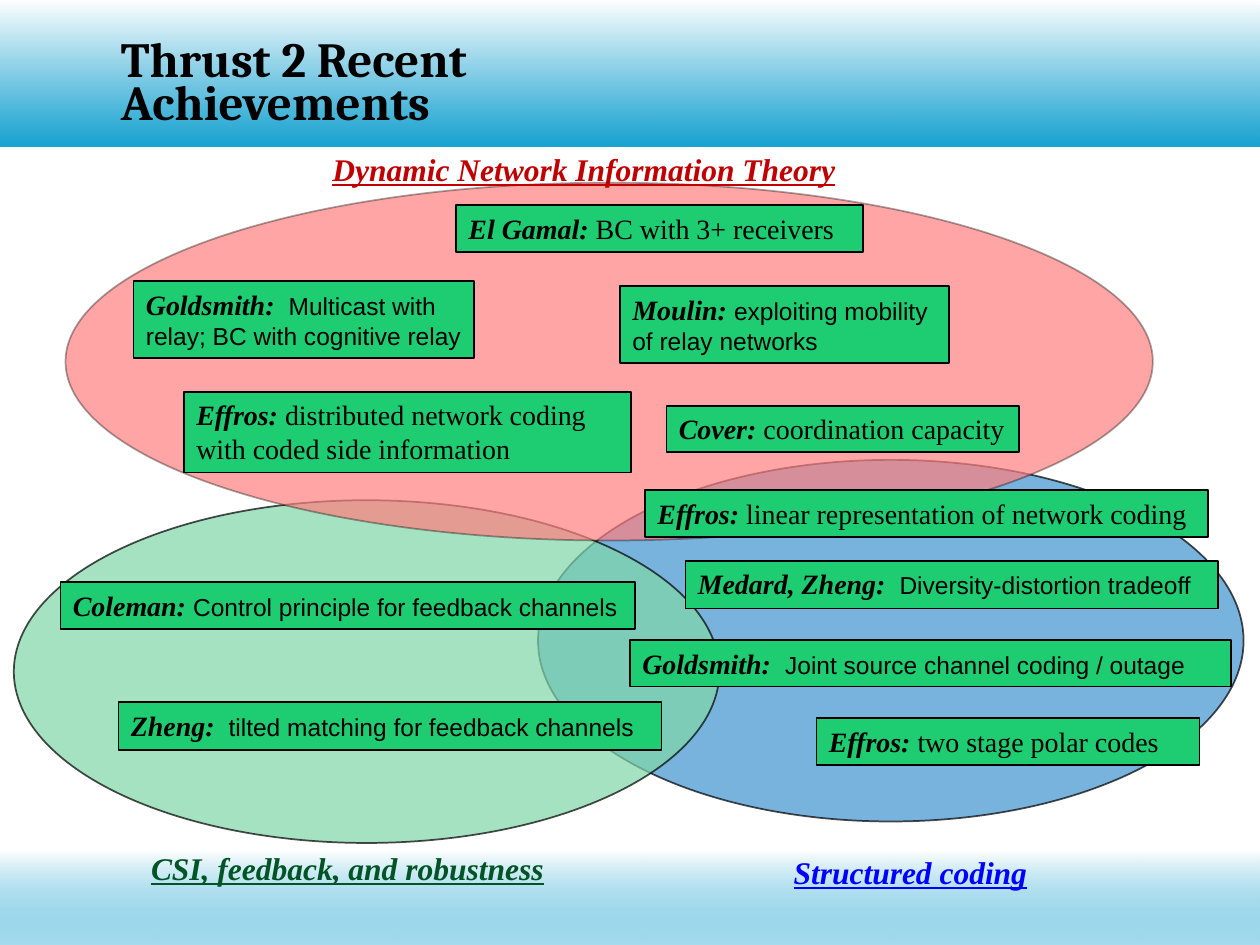
from collections import namedtuple

from lxml import etree
from pptx import Presentation
from pptx.dml.color import RGBColor
from pptx.enum.shapes import MSO_SHAPE
from pptx.enum.text import MSO_ANCHOR, MSO_AUTO_SIZE, PP_ALIGN
from pptx.oxml.ns import qn
from pptx.util import Inches, Pt

COLORS = {
    "black": "000000",
    "white": "FFFFFF",
    "band": "0099CC",
    "note": "1ECC71",
    "theory": "FF7F7F",
    "theory_heading": "C00000",
    "feedback": "7FD7A7",
    "feedback_heading": "005426",
    "coding": "4094D0",
    "coding_heading": "0000FF",
}
SERIF = ("Times New Roman", 16)
SANS = ("Arial", 14)

Box = namedtuple("Box", "x y w h")
Topic = namedtuple("Topic", "name box line_alpha heading heading_box notes")

# Heading and note boxes are offsets from the top left of their topic's ellipse.
TOPICS = [
    Topic("coding", Box(4.27, 3.65, 5.6, 2.87), 70,
          "Structured coding", Box(1.93, 3.07, 2.14, 0.4), [
              (Box(0.85, 0.24, 4.47, 0.37), "Effros: ",
               "linear representation of network coding", SERIF),
              (Box(1.17, 0.8, 4.23, 0.38), "Medard, Zheng:  ",
               "Diversity-distortion tradeoff", SANS),
              (Box(0.73, 1.43, 4.77, 0.37), "Goldsmith:  ",
               "Joint source channel coding / outage", SANS),
              (Box(2.21, 2.05, 3.04, 0.37), "Effros: ",
               "two stage polar codes", SERIF),
          ]),
    Topic("feedback", Box(0.11, 3.97, 5.6, 2.72), 70,
          "CSI, feedback, and robustness", Box(0.99, 2.72, 3.65, 0.4), [
              (Box(0.37, 0.65, 4.56, 0.37), "Coleman: ",
               "Control principle for feedback channels", SANS),
              (Box(0.83, 1.6, 4.31, 0.38), "Zheng:  ",
               "tilted matching for feedback channels", SANS),
          ]),
    Topic("theory", Box(0.52, 1.45, 8.63, 2.84), 35,
          "Dynamic Network Information Theory", Box(2.02, -0.31, 4.22, 0.4), [
              (Box(3.1, 0.18, 3.23, 0.37), "El Gamal: ",
               "BC with 3+ receivers", SERIF),
              (Box(0.54, 0.78, 2.7, 0.61), "Goldsmith:  ",
               "Multicast with relay; BC with cognitive relay", SANS),
              (Box(4.4, 0.82, 2.61, 0.61), "Moulin: ",
               "exploiting mobility of relay networks", SANS),
              (Box(0.94, 1.66, 3.55, 0.64), "Effros: ",
               "distributed network coding with coded side information", SERIF),
              (Box(4.77, 1.77, 2.8, 0.37), "Cover: ",
               "coordination capacity", SERIF),
          ]),
]


def rgb(name):
    return RGBColor.from_string(COLORS[name])


def emu(box):
    return [Inches(v) for v in box]


def inside(outer, box):
    return Box(outer.x + box.x, outer.y + box.y, box.w, box.h)


def set_alpha(color, percent):
    etree.SubElement(color, qn("a:alpha")).set("val", str(percent * 1000))


def style(r, font, size, color, bold=False, italic=False, underline=None):
    r.font.name = font
    r.font.size = Pt(size)
    r.font.bold = bold
    r.font.italic = italic
    r.font.underline = underline
    r.font.color.rgb = rgb(color)


def add_shape(s, kind, box, fill):
    sp = s.shapes.add_shape(kind, *emu(box))
    sp.shadow.inherit = False
    sp.fill.solid()
    sp.fill.fore_color.rgb = rgb(fill)
    sp.line.color.rgb = rgb("black")
    sp.line.width = Pt(1)
    return sp


def add_band(s, box, alpha):
    """Band that fades from white at its top to blue at its bottom."""
    sp = add_shape(s, MSO_SHAPE.RECTANGLE, box, "white")
    sp.line.fill.background()
    sp.fill.gradient()
    sp.fill.gradient_angle = 270
    top, bottom = sp.fill.gradient_stops
    top.position, bottom.position = 0, 1
    top.color.rgb = rgb("white")
    bottom.color.rgb = rgb("band")
    set_alpha(sp.element.spPr.findall(".//" + qn("a:srgbClr"))[-1], alpha)


def add_ellipse(s, topic):
    sp = add_shape(s, MSO_SHAPE.OVAL, topic.box, topic.name)
    fill, line = sp.element.spPr.findall(".//" + qn("a:srgbClr"))
    set_alpha(fill, 70)
    set_alpha(line, topic.line_alpha)


def add_heading(s, box, text, color):
    tf = s.shapes.add_textbox(*emu(box)).text_frame
    tf.word_wrap = True
    tf.text = text
    style(tf.paragraphs[0].runs[0], SERIF[0], 18, color, True, True, True)


def add_note(s, box, author, work, font):
    tf = add_shape(s, MSO_SHAPE.RECTANGLE, box, "note").text_frame
    tf.word_wrap = True
    tf.vertical_anchor = MSO_ANCHOR.TOP
    p = tf.paragraphs[0]
    p.alignment = PP_ALIGN.LEFT
    for text in (author, work):
        p.add_run().text = text
    style(p.runs[0], *SERIF, "black", True, True)
    style(p.runs[1], *font, "black")


def add_topic_text(s, topic):
    add_heading(s, inside(topic.box, topic.heading_box), topic.heading,
                topic.name + "_heading")
    for box, author, work, font in topic.notes:
        add_note(s, inside(topic.box, box), author, work, font)


def set_title(s, box, text):
    title = s.shapes.title
    title.left, title.top, title.width, title.height = emu(box)
    title.element.getparent().append(title.element)  # in front of the bands
    tf = title.text_frame
    tf.text = text
    tf.word_wrap = True
    tf.auto_size = MSO_AUTO_SIZE.SHAPE_TO_FIT_TEXT
    tf.vertical_anchor = MSO_ANCHOR.TOP
    p = tf.paragraphs[0]
    p.alignment = PP_ALIGN.LEFT
    p.line_spacing = 0.73
    style(p.runs[0], "Cambria", 28, "black", True)


def main():
    prs = Presentation()
    prs.slide_width, prs.slide_height = Inches(10), Inches(7.5)
    s = prs.slides.add_slide(prs.slide_layouts[5])
    add_band(s, Box(0, 0, 10, 1.16), 91)
    add_band(s, Box(0, 6.75, 10, 0.75), 34)
    set_title(s, Box(0.86, 0.29, 5.32, 0.45), "Thrust 2 Recent Achievements")
    for topic in TOPICS:
        add_ellipse(s, topic)
    for topic in TOPICS:
        add_topic_text(s, topic)
    prs.save("out.pptx")


if __name__ == "__main__":
    main()
